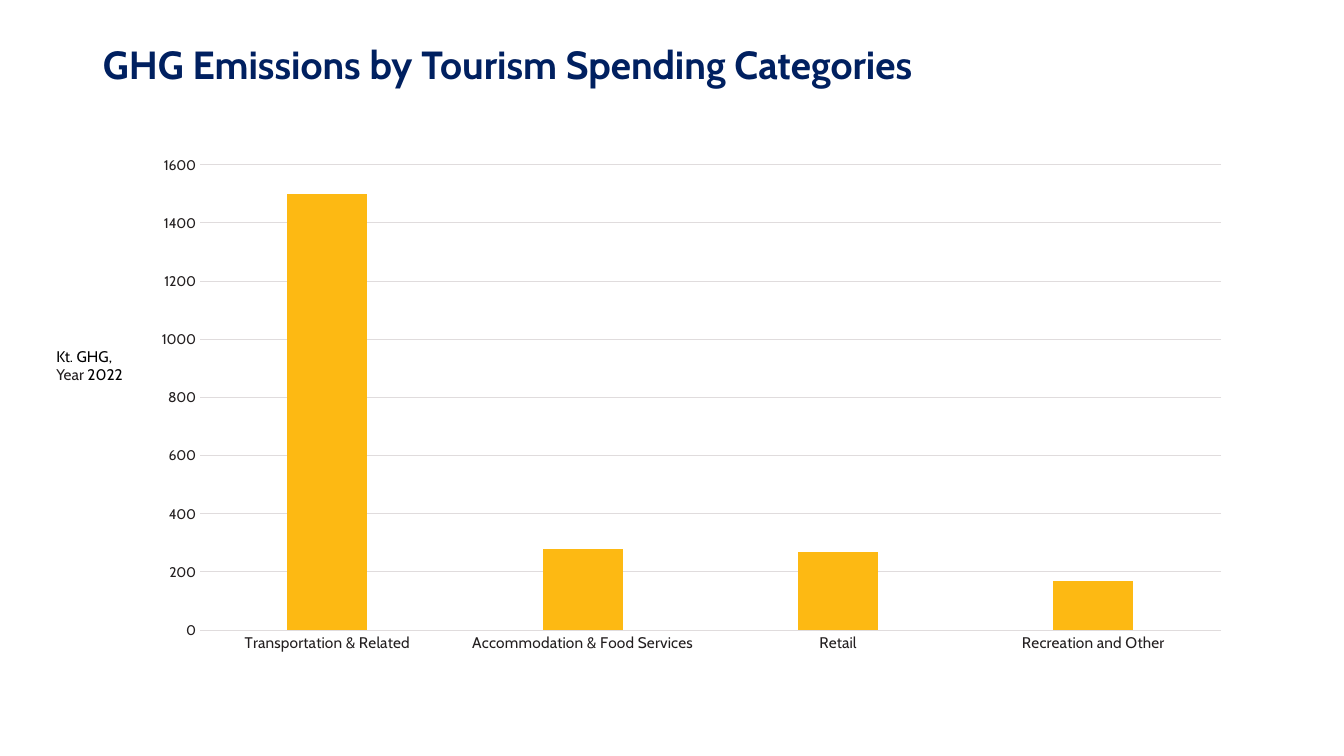
import pptx
import pptx.chart.data
import pptx.dml.color
import pptx.enum.chart
import pptx.enum.text
import pptx.oxml
import pptx.oxml.ns
import pptx.util

RGBColor = pptx.dml.color.RGBColor
NAVY = RGBColor(0x00, 0x20, 0x60)
GOLD = RGBColor(0xFD, 0xB9, 0x13)
INK = RGBColor(0x23, 0x1F, 0x20)
BLACK = RGBColor(0, 0, 0)
GRID = RGBColor(0xE0, 0xDC, 0xDD)
FACE = "Cabin"
SCALE = 9144  # EMU per px, 100 px to the inch

SALES = {
    "Transportation & Related": 1500,
    "Accommodation & Food Services": 280,
    "Retail": 270,
    "Recreation and Other": 170,
}


def px(*sizes):
    return [pptx.util.Emu(size * SCALE) for size in sizes]


def style(font, size, color, bold=False):
    font.name = FACE
    font.size = pptx.util.Pt(size)
    font.bold = bold
    font.color.rgb = color


def write(para, text, size=11, color=BLACK, bold=False):
    run = para.add_run()
    run.text = text
    style(run.font, size, color, bold)


def rule(line):
    line.color.rgb = GRID
    line.width = pptx.util.Pt(0.75)


def add_title(slide, box):
    title = slide.shapes.title
    title.left, title.top, title.width, title.height = px(*box)
    frame = title.text_frame
    frame.word_wrap = True
    frame.vertical_anchor = pptx.enum.text.MSO_ANCHOR.TOP
    para = frame.paragraphs[0]
    para.alignment = pptx.enum.text.PP_ALIGN.LEFT
    para.line_spacing = 0.9
    write(para, "GHG Emissions by Tourism Spending Categories",
          size=28, color=NAVY, bold=True)


def set_plot(chart, **parts):
    """Fix the inner plot area as fractions of the chart box."""
    sizes = "".join(f'<c:{key} val="{val}"/>' for key, val in parts.items())
    layout = pptx.oxml.parse_xml(
        f'<c:layout {pptx.oxml.ns.nsdecls("c")}><c:manualLayout>'
        '<c:layoutTarget val="inner"/><c:xMode val="edge"/>'
        f'<c:yMode val="edge"/>{sizes}</c:manualLayout></c:layout>')
    area = chart._chartSpace.chart.plotArea
    for old in area.findall(pptx.oxml.ns.qn("c:layout")):
        area.remove(old)
    area.insert(0, layout)


def add_bars(slide, box):
    data = pptx.chart.data.CategoryChartData()
    data.categories = list(SALES)
    data.add_series("Series 1", list(SALES.values()))
    kind = pptx.enum.chart.XL_CHART_TYPE.COLUMN_CLUSTERED
    chart = slide.shapes.add_chart(kind, *px(*box), data).chart
    chart.has_legend = False
    chart.has_title = False
    style(chart.font, 10, INK)
    set_plot(chart, x=0.055, y=0.036, w=0.925, h=0.9)

    # Columns
    plot = chart.plots[0]
    plot.gap_width = 219
    plot.overlap = -27
    plot.vary_by_categories = False
    fill = plot.series[0].format.fill
    fill.solid()
    fill.fore_color.rgb = GOLD

    # Axes
    none = pptx.enum.chart.XL_TICK_MARK.NONE
    for axis, size in ((chart.category_axis, 11), (chart.value_axis, 10)):
        axis.major_tick_mark = none
        axis.minor_tick_mark = none
        style(axis.tick_labels.font, size, INK)
    rule(chart.category_axis.format.line)
    scale = chart.value_axis
    scale.minimum_scale, scale.maximum_scale, scale.major_unit = 0, 1600, 200
    scale.format.line.fill.background()
    scale.has_major_gridlines = True
    rule(scale.major_gridlines.format.line)


def add_unit(slide, box):
    frame = slide.shapes.add_textbox(*px(*box)).text_frame
    frame.word_wrap = True
    frame.auto_size = pptx.enum.text.MSO_AUTO_SIZE.SHAPE_TO_FIT_TEXT
    write(frame.paragraphs[0], "Kt. GHG,")
    para = frame.add_paragraph()
    write(para, "Year", color=INK)
    write(para, " 2022")


def main():
    deck = pptx.Presentation()
    deck.slide_width, deck.slide_height = px(1333, 750)
    slide = deck.slides.add_slide(deck.slide_layouts[5])
    add_title(slide, (92, 40, 1150, 105))
    add_bars(slide, (138, 145, 1095, 513))
    add_unit(slide, (46, 339, 118, 47))
    deck.save("out.pptx")


if __name__ == "__main__":
    main()
